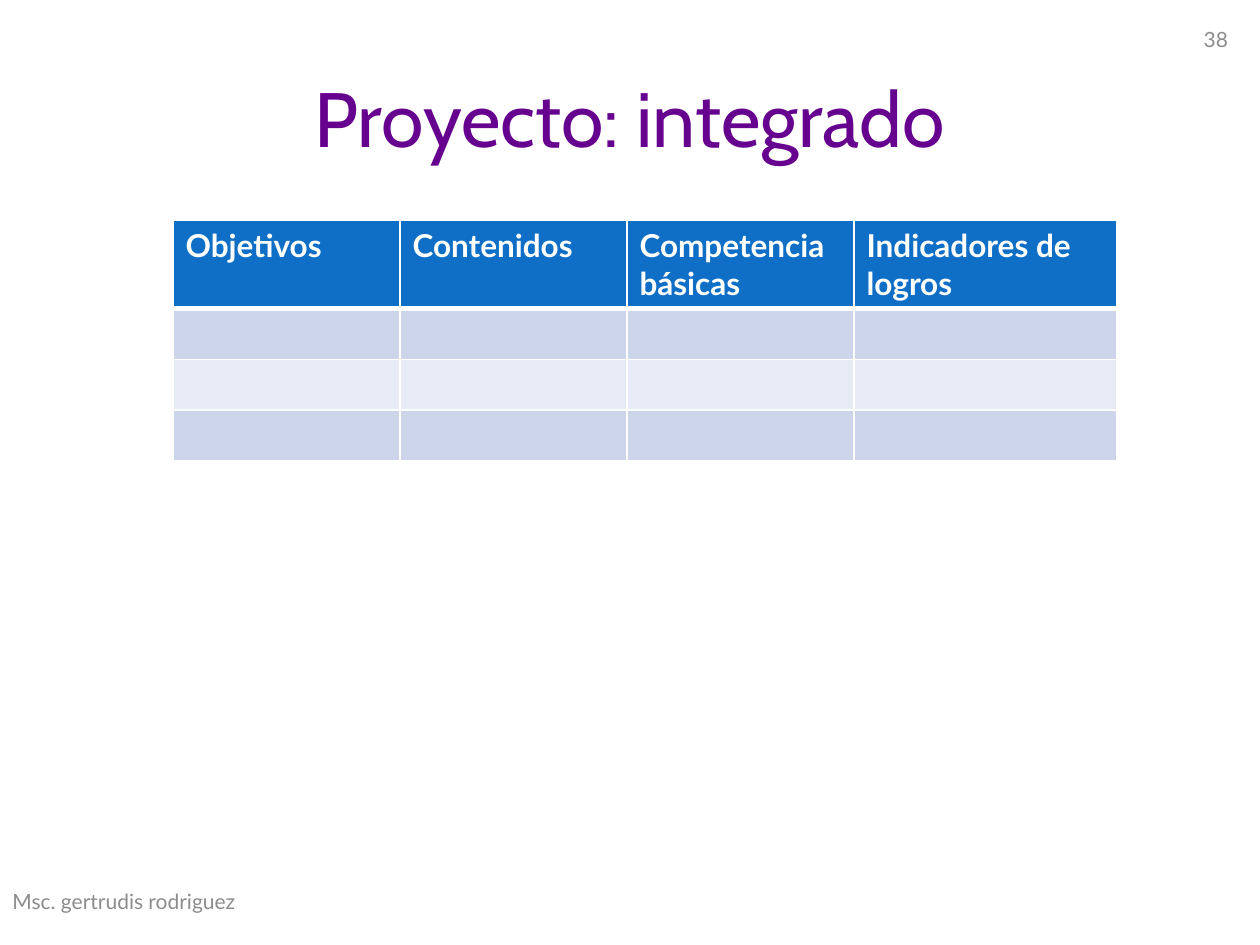
from lxml import etree
from pptx import Presentation, util as u
from pptx.dml.color import RGBColor
from pptx.enum import shapes, text

PX = 914400 / 126
PURPLE = RGBColor(0x66, 0x00, 0x8F)
GRAY = RGBColor(0x8C, 0x8C, 0x8C)
WHITE = RGBColor(0xFF, 0xFF, 0xFF)
BLUE = RGBColor(0x0F, 0x6F, 0xC6)
BAND_DARK = RGBColor(0xCC, 0xD5, 0xEA)
BAND_LIGHT = RGBColor(0xE7, 0xEB, 0xF5)
NS = "http://schemas.openxmlformats.org/drawingml/2006/main"


def px(*values):
    return [u.Emu(round(v * PX)) for v in values]


def write(tf, words, color, align=text.PP_ALIGN.LEFT, **font):
    tf.word_wrap = True
    p = tf.paragraphs[0]
    p.alignment = align
    r = p.add_run()
    r.text = words
    r.font.color.rgb = color
    for name, value in font.items():
        setattr(r.font, name, value)


prs = Presentation()
prs.slide_width, prs.slide_height = px(1260, 945)
s = prs.slides.add_slide(prs.slide_layouts[6])

# Title and footer
title = s.shapes.add_textbox(*px(63, 38, 1134, 157))
write(title.text_frame, "Proyecto: integrado", PURPLE, text.PP_ALIGN.CENTER,
      name="Cabin", size=u.Pt(44))
footer = s.shapes.add_textbox(*px(0, 876, 400, 50))
write(footer.text_frame, "Msc. gertrudis rodriguez", GRAY, name="Lato", size=u.Pt(12))

# Page number
number = s.shapes.add_shape(shapes.MSO_SHAPE.ROUNDED_RECTANGLE, *px(1172, 0, 88, 78))
number.shadow.inherit = False
number.fill.background()
number.line.fill.background()
write(number.text_frame, "38", GRAY, text.PP_ALIGN.CENTER, name="Lato", size=u.Pt(12))
for sp in (title, footer, number):
    sp.text_frame.vertical_anchor = text.MSO_ANCHOR.MIDDLE

# Table with a header row and three banded empty rows
headers = ["Objetivos", "Contenidos", "Competencia básicas", "Indicadores de logros"]
widths = px(227, 227, 227, 263)
heights = px(88, 51, 51, 51)
fills = [BLUE, BAND_DARK, BAND_LIGHT, BAND_DARK]
left, top = px(173, 220)
table = s.shapes.add_table(len(heights), len(widths), left, top,
                           sum(widths), sum(heights)).table
for column, width in zip(table.columns, widths):
    column.width = width
for i, (row, height) in enumerate(zip(table.rows, heights)):
    row.height = height
    for j, cell in enumerate(row.cells):
        if i == 0:
            write(cell.text_frame, headers[j], WHITE, name="Lato", size=u.Pt(18), bold=True)
        # Borders come before the fill in the cell properties
        tc_pr = cell._tc.get_or_add_tcPr()
        points = {"lnL": 1, "lnR": 1, "lnT": 3 if i == 1 else 1, "lnB": 3 if i == 0 else 1}
        for tag, width in points.items():
            ln = etree.SubElement(tc_pr, f"{{{NS}}}{tag}", w=str(u.Pt(width)))
            fill = etree.SubElement(ln, f"{{{NS}}}solidFill")
            etree.SubElement(fill, f"{{{NS}}}srgbClr", val=str(WHITE))
        cell.fill.solid()
        cell.fill.fore_color.rgb = fills[i]

prs.save("out.pptx")
